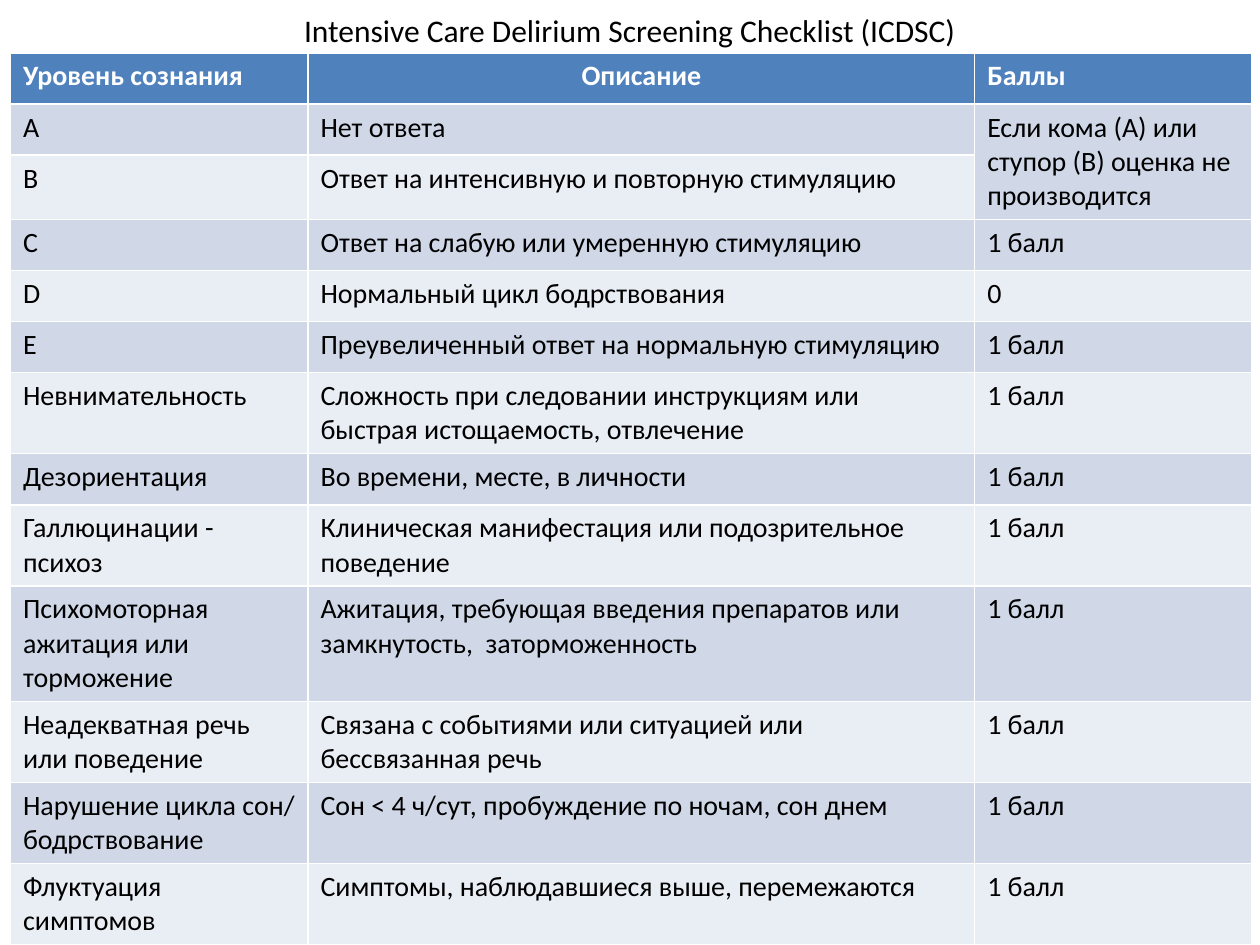
from pptx import Presentation
from pptx.dml.color import RGBColor
from pptx.enum.text import MSO_ANCHOR, PP_ALIGN
from pptx.util import Pt

CENTER = PP_ALIGN.CENTER
MIDDLE = MSO_ANCHOR.MIDDLE
FONT = "Calibri"
HEAD = "4F81BD"
BANDS = ["D0D8E8", "E9EDF4"]
TITLE = "Intensive Care Delirium Screening Checklist (ICDSC)"
POINT = "1 балл"
WIDTHS = [170, 381, 158.4]
ROW, TALL = 29.2, 46.08
ROWS = [
    ("Уровень сознания", "Описание", "Баллы"),
    ("А", "Нет ответа", "Если кома (А) или ступор (В) оценка не производится"),
    ("В", "Ответ на интенсивную и повторную стимуляцию", ""),
    ("С", "Ответ на слабую или умеренную стимуляцию", POINT),
    ("D", "Нормальный цикл бодрствования", "0"),
    ("Е", "Преувеличенный ответ на нормальную стимуляцию", POINT),
    ("Невнимательность",
     "Сложность при следовании инструкциям или быстрая истощаемость, отвлечение", POINT),
    ("Дезориентация", "Во времени, месте, в личности", POINT),
    ("Галлюцинации - психоз",
     "Клиническая манифестация или подозрительное поведение", POINT),
    ("Психомоторная ажитация или торможение",
     "Ажитация, требующая введения препаратов или замкнутость,  заторможенность", POINT),
    ("Неадекватная речь или поведение",
     "Связана с событиями или ситуацией или бессвязанная речь", POINT),
    ("Нарушение цикла сон/ бодрствование",
     "Сон < 4 ч/сут, пробуждение по ночам, сон днем", POINT),
    ("Флуктуация симптомов", "Симптомы, наблюдавшиеся выше, перемежаются", POINT),
]


def color(code):
    return RGBColor.from_string(code)


def write(frame, text, size, code="000000", bold=False, align=None):
    frame.text = text
    para = frame.paragraphs[0]
    para.alignment = align
    for run in para.runs:
        font = run.font
        font.name, font.size, font.bold = FONT, Pt(size), bold
        font.color.rgb = color(code)


def add_title(slide):
    title = slide.shapes.title
    title.left, title.top = Pt(36), Pt(-28)
    title.width, title.height = Pt(648), Pt(90)
    title.text_frame.vertical_anchor = MIDDLE
    write(title.text_frame, TITLE, 18, align=CENTER)


def fill_cell(cell, text, row, col):
    head = row == 0
    cell.fill.solid()
    cell.fill.fore_color.rgb = color(HEAD if head else BANDS[(row - 1) % 2])
    write(cell.text_frame, text, 16, "FFFFFF" if head else "000000",
          head, CENTER if head and col == 1 else None)


def add_grid(slide):
    frame = slide.shapes.add_table(len(ROWS), len(WIDTHS), Pt(6), Pt(30.24),
                                   Pt(sum(WIDTHS)), Pt(504.72))
    table = frame.table
    for col, width in zip(table.columns, WIDTHS):
        col.width = Pt(width)
    for r, texts in enumerate(ROWS):
        table.rows[r].height = Pt(TALL if r == 6 else ROW)
        for c, text in enumerate(texts):
            fill_cell(table.cell(r, c), text, r, c)
    table.cell(1, 2).merge(table.cell(2, 2))


def main():
    deck = Presentation()
    deck.slide_width, deck.slide_height = Pt(720), Pt(540)
    slide = deck.slides.add_slide(deck.slide_layouts[5])
    add_title(slide)
    add_grid(slide)
    deck.save("out.pptx")


if __name__ == "__main__":
    main()
